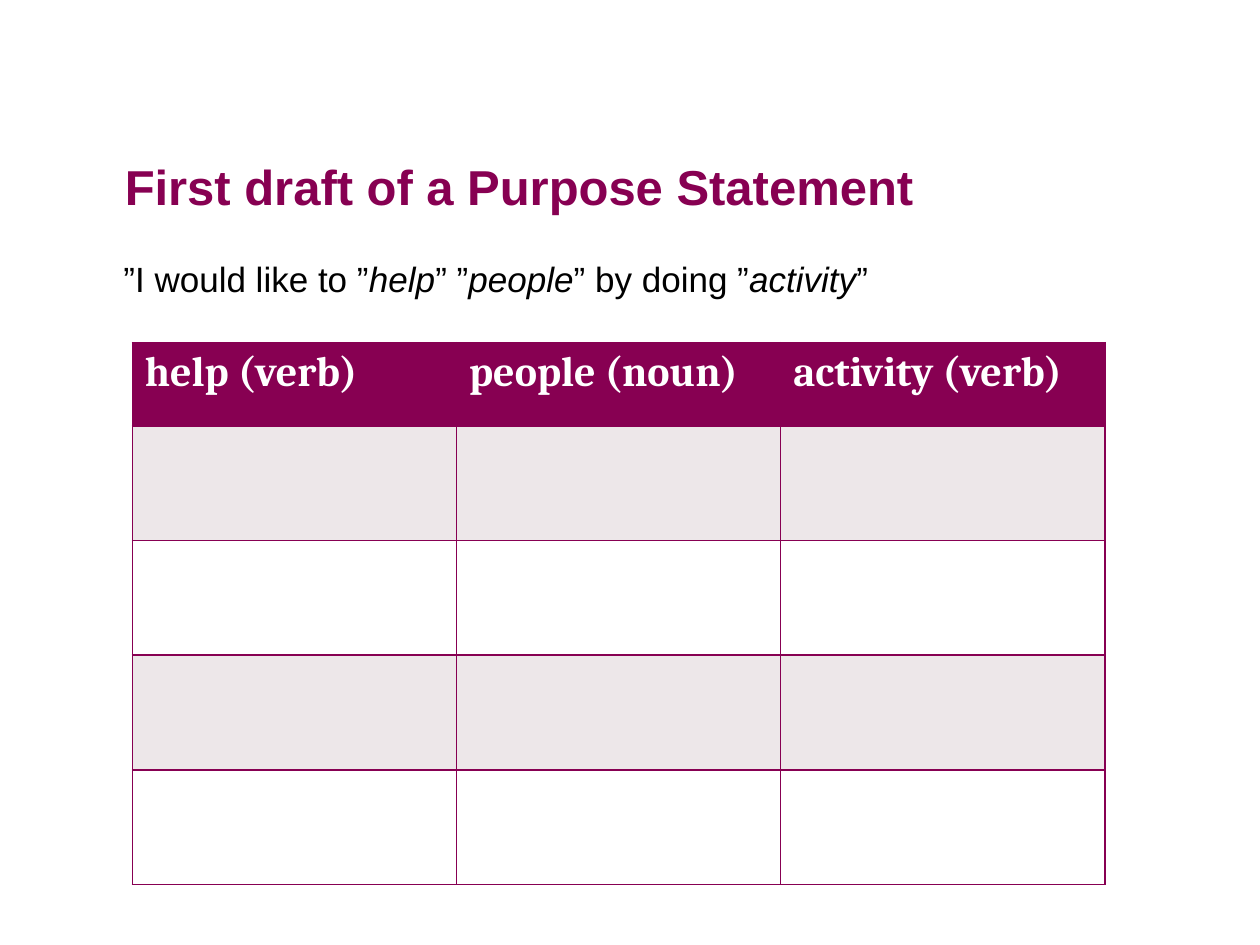
"""Build the purpose statement slide with its three-column worksheet table."""
import itertools

import pptx
import pptx.dml.color
import pptx.enum.text
import pptx.oxml.ns
import pptx.util
from lxml import etree

Inches = pptx.util.Inches
Pt = pptx.util.Pt
Color = pptx.dml.color.RGBColor.from_string

THEME = {
    "plum": "870052", "band": "EDE7E9", "white": "FFFFFF", "black": "000000",
    "title": {"size": Pt(28), "name": "Arial", "bold": True},
    "body": {"size": Pt(20), "name": "Arial", "bold": False},
    "header": {"size": Pt(24), "name": "Cambria", "bold": True},
}


def set_font(font, style, color):
    for attribute, value in THEME[style].items():
        setattr(font, attribute, value)
    font.color.rgb = Color(THEME[color])


def add_borders(cell, color, width):
    properties = cell._tc.get_or_add_tcPr()
    for side in ("lnL", "lnR", "lnT", "lnB"):
        border = etree.SubElement(properties, pptx.oxml.ns.qn(f"a:{side}"), w=str(width))
        fill = etree.SubElement(border, pptx.oxml.ns.qn("a:solidFill"))
        etree.SubElement(fill, pptx.oxml.ns.qn("a:srgbClr"), val=color)


presentation = pptx.Presentation()
presentation.slide_width = Inches(10)
presentation.slide_height = Inches(7.5)
slide = presentation.slides.add_slide(presentation.slide_layouts[5])
slide.background.fill.solid()
slide.background.fill.fore_color.rgb = Color(THEME["white"])

heading = slide.shapes.title
heading_format = {"left": Inches(0.59), "top": Inches(1.15),
                  "width": Inches(8.5), "height": Inches(1.25)}
for attribute, value in heading_format.items():
    setattr(heading, attribute, value)
heading.text_frame.text = "First draft of a Purpose Statement"
heading.text_frame.paragraphs[0].alignment = pptx.enum.text.PP_ALIGN.LEFT
set_font(heading.text_frame.paragraphs[0].runs[0].font, "title", "plum")

statement = slide.shapes.add_textbox(Inches(0.58), Inches(1.97), Inches(8.5), Inches(4.5))
for frame, left, top in ((heading.text_frame, 0.4, 0.09), (statement.text_frame, 0.4, 0.07)):
    frame_format = {
        "margin_left": Inches(left), "margin_top": Inches(top), "word_wrap": True,
        "vertical_anchor": pptx.enum.text.MSO_ANCHOR.TOP,
        "auto_size": pptx.enum.text.MSO_AUTO_SIZE.NONE,
    }
    for attribute, value in frame_format.items():
        setattr(frame, attribute, value)

phrases = ["”I would like to ”", "help", "” ”", "people", "” by doing ”", "activity", "”"]
for phrase, italic in zip(phrases, itertools.cycle((False, True))):
    run = statement.text_frame.paragraphs[0].add_run()
    run.text = phrase
    set_font(run.font, "body", "black")
    run.font.italic = italic

headers = ["help (verb)", "people (noun)", "activity (verb)"]
row_heights = [0.66] + [0.91] * 4
worksheet = slide.shapes.add_table(
    len(row_heights), len(headers), Inches(1.05), Inches(2.72),
    Inches(7.72), Inches(sum(row_heights))).table
worksheet.horz_banding = False
for row, height in zip(worksheet.rows, row_heights):
    row.height = Inches(height)

for row_index, row in enumerate(worksheet.rows):
    shade = "plum" if row_index == 0 else "band" if row_index % 2 else "white"
    for cell in row.cells:
        add_borders(cell, THEME["plum"], Pt(1))
        cell.fill.solid()
        cell.fill.fore_color.rgb = Color(THEME[shade])

for cell, header in zip(worksheet.rows[0].cells, headers):
    cell.text = header
    set_font(cell.text_frame.paragraphs[0].runs[0].font, "header", "white")

presentation.save("out.pptx")
